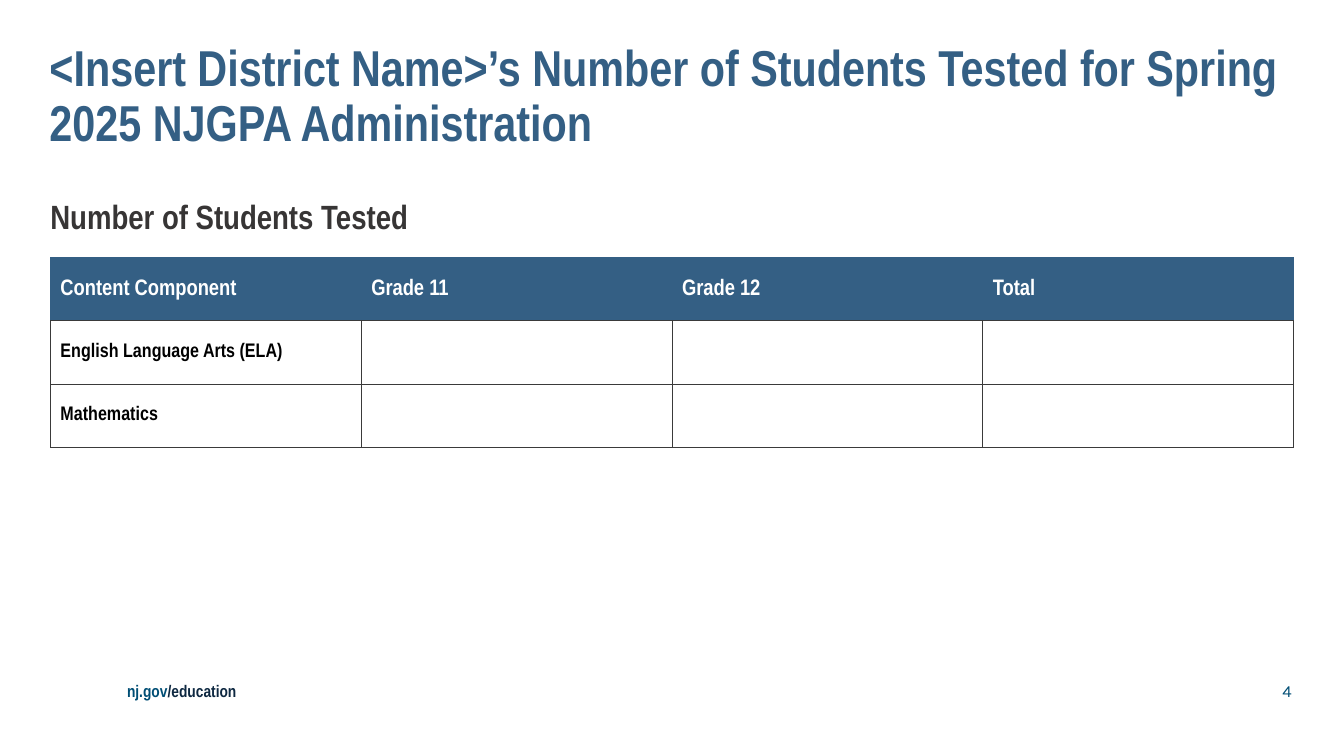
from dataclasses import dataclass

from lxml import etree
from pptx import Presentation
from pptx import util as u
from pptx.dml.color import RGBColor
from pptx.enum import text
from pptx.oxml import ns


@dataclass(frozen=True)
class Theme:
    face: str = "Arial Narrow"
    digit: str = "Karla"
    blue: str = "345F84"
    teal: str = "004E75"
    navy: str = "0E2841"
    gray: str = "373535"
    rule: str = "3A3A3A"
    white: str = "FFFFFF"
    black: str = "000000"
    title: int = 36
    head: int = 24
    label: int = 16
    cell: int = 14
    foot: int = 12


class Deck:
    def __init__(self, theme):
        self.theme = theme
        self.file = Presentation()
        self.file.slide_width = u.Inches(13.33)
        self.file.slide_height = u.Inches(7.5)
        self.slide = self.file.slides.add_slide(self.file.slide_layouts[6])

    def run(self, para, words, size, color, face=None, bold=True):
        run = para.add_run()
        run.text = words
        style = {"name": face or self.theme.face, "size": u.Pt(size), "bold": bold}
        for key, value in style.items():
            setattr(run.font, key, value)
        run.font.color.rgb = RGBColor.from_string(color)

    def box(self, area, runs, size, face=None, bold=True, frame=None, para=None):
        body = self.slide.shapes.add_textbox(*map(u.Inches, area)).text_frame
        line = body.paragraphs[0]
        edges = {f"margin_{side}": 0 for side in ("left", "top", "right", "bottom")}
        formats = ((body, {"word_wrap": True, **edges, **(frame or {})}),
                   (line, para or {}))
        for item, style in formats:
            for key, value in style.items():
                setattr(item, key, value)
        for words, color in runs:
            self.run(line, words, size, color, face, bold)

    def edge(self, cell, sides):
        props = cell._tc.get_or_add_tcPr()
        for side in "LRTB":
            line = etree.SubElement(props, ns.qn(f"a:ln{side}"), w=str(u.Pt(0.5)))
            if side in sides:
                fill = etree.SubElement(line, ns.qn("a:solidFill"))
                etree.SubElement(fill, ns.qn("a:srgbClr"), val=self.theme.rule)
            else:
                etree.SubElement(line, ns.qn("a:noFill"))

    def table(self, area, rows):
        theme = self.theme
        grid = self.slide.shapes.add_table(
            len(rows), len(rows[0]), *map(u.Inches, area)).table
        for r, row in enumerate(rows):
            for c, words in enumerate(row):
                cell = grid.cell(r, c)
                cell.vertical_anchor = text.MSO_ANCHOR.MIDDLE
                self.edge(cell, "LRTB" if r else "B")
                para = cell.text_frame.paragraphs[0]
                if r:
                    cell.fill.background()
                    size, color = theme.cell, theme.black
                else:
                    cell.fill.solid()
                    cell.fill.fore_color.rgb = RGBColor.from_string(theme.blue)
                    para.line_spacing = u.Pt(16)
                    size, color = theme.label, theme.white
                if words:
                    self.run(para, words, size, color)


def main():
    theme = Theme()
    deck = Deck(theme)
    tight = {"line_spacing": 0.9}
    mid = {"vertical_anchor": text.MSO_ANCHOR.MIDDLE}
    title = ("<Insert District Name>’s Number of Students Tested "
             "for Spring 2025 NJGPA Administration")
    deck.box((0.49, 0.43, 12.33, 0.46), [(title, theme.blue)], theme.title, para=tight)
    deck.box((0.5, 1.99, 12.33, 0.38), [("Number of Students Tested", theme.gray)],
             theme.head, para=tight)
    deck.table((0.5, 2.55, 12.33, 1.89), [
        ("Content Component", "Grade 11", "Grade 12", "Total"),
        ("English Language Arts (ELA)", "", "", ""),
        ("Mathematics", "", "", ""),
    ])
    deck.box((1.26, 6.75, 5.62, 0.2),
             [("nj.gov", theme.teal), ("/education", theme.navy)],
             theme.foot, frame=mid)
    deck.box((7.19, 6.75, 5.62, 0.2), [("4", theme.teal)], theme.foot,
             face=theme.digit, bold=False, frame=mid,
             para={"alignment": text.PP_ALIGN.RIGHT})
    deck.file.save("out.pptx")


if __name__ == "__main__":
    main()
